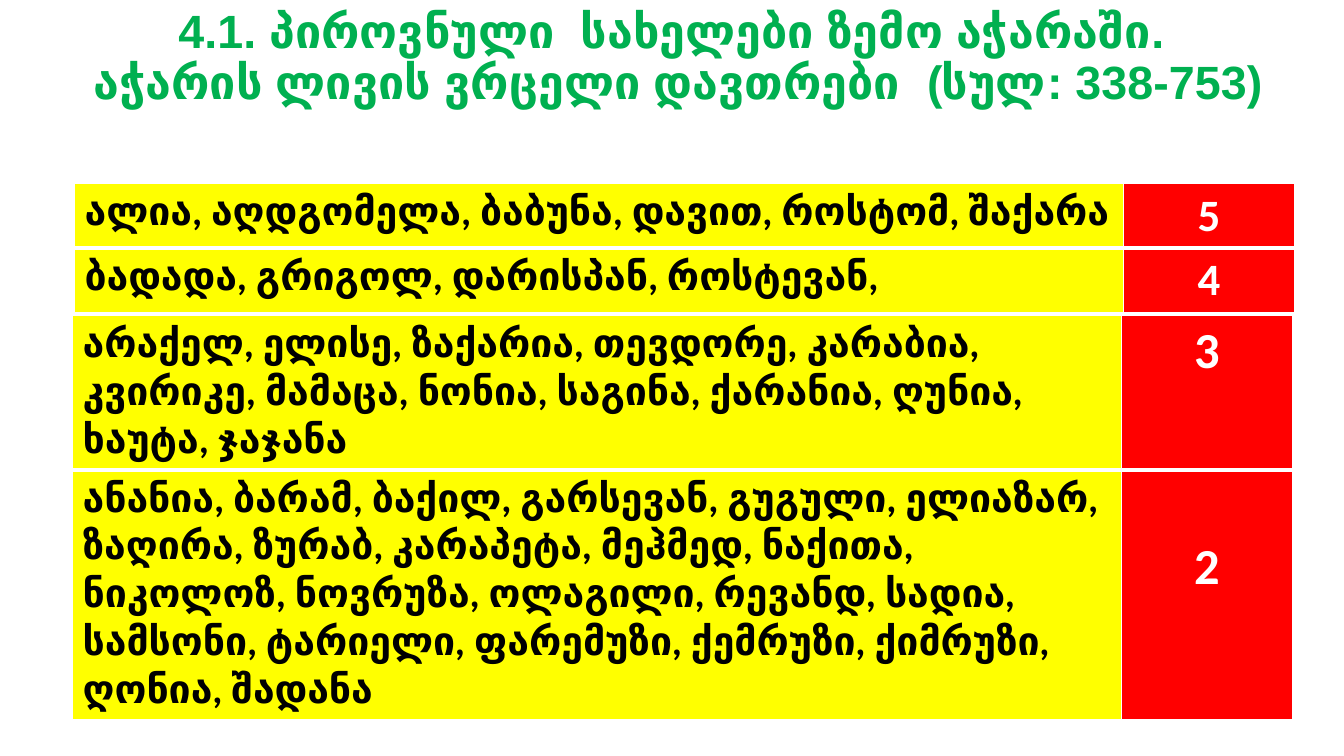
"""Build a slide listing personal names by how often they occur."""
import pptx
import pptx.dml.color
import pptx.enum.text
import pptx.oxml.ns
import pptx.util
from lxml import etree

WIDTH, HEIGHT = 13.33, 7.5
WHITE, BLACK, GREEN, YELLOW, RED = "FFFFFF", "000000", "00B050", "FFFF00", "FF0000"
COLUMNS = (10.4, 1.7)
INSET = 0.05
THIN, THICK = 1, 3
CENTER = pptx.enum.text.PP_ALIGN.CENTER
LEFT = pptx.enum.text.PP_ALIGN.LEFT

TITLE = (
    "4.1. პიროვნული  სახელები ზემო აჭარაში. ",
    "აჭარის ლივის ვრცელი დავთრები  (სულ: 338-753)",
)
TABLES = (
    {
        "position": (0.74, 1.82),
        "heights": (0.64, 0.64),
        "count_size": 32,
        "count_offsets": (0, 0),
        "rows": (
            ("ალია, აღდგომელა, ბაბუნა, დავით, როსტომ, შაქარა", "5"),
            ("ბადადა, გრიგოლ, დარისპან, როსტევან,", "4"),
        ),
    },
    {
        "position": (0.72, 3.13),
        "heights": (1.53, 2.48),
        "count_size": 36,
        "count_offsets": (0, 0.61),
        "rows": (
            ("არაქელ, ელისე, ზაქარია, თევდორე, კარაბია, კვირიკე, მამაცა, "
             "ნონია, საგინა, ქარანია, ღუნია, ხაუტა, ჯაჯანა", "3"),
            ("ანანია, ბარამ, ბაქილ, გარსევან, გუგული, ელიაზარ, ზაღირა, "
             "ზურაბ, კარაპეტა, მეჰმედ, ნაქითა, ნიკოლოზ, ნოვრუზა, ოლაგილი, "
             "რევანდ, სადია, სამსონი, ტარიელი, ფარემუზი, ქემრუზი, ქიმრუზი, "
             "ღონია, შადანა", "2"),
        ),
    },
)


def color(value):
    return pptx.dml.color.RGBColor.from_string(value)


def inches(*values):
    return [pptx.util.Inches(value) for value in values]


def write(paragraph, text, font, size, text_color, alignment):
    paragraph.text = text
    paragraph.alignment = alignment
    paragraph.font.name = font
    paragraph.font.size = pptx.util.Pt(size)
    paragraph.font.bold = True
    paragraph.font.color.rgb = color(text_color)


def add_borders(cell, top, bottom):
    properties = cell._tc.get_or_add_tcPr()
    for side, points in zip("LRTB", (THIN, THIN, top, bottom)):
        line = etree.SubElement(properties, pptx.oxml.ns.qn(f"a:ln{side}"),
                                w=str(pptx.util.Pt(points)))
        fill = etree.SubElement(line, pptx.oxml.ns.qn("a:solidFill"))
        etree.SubElement(fill, pptx.oxml.ns.qn("a:srgbClr"), val=WHITE)


def add_title(slide):
    box = slide.shapes.add_textbox(*inches(0.4, 0, 12.65, 1.17))
    frame = box.text_frame
    frame.word_wrap = True
    frame.vertical_anchor = pptx.enum.text.MSO_ANCHOR.MIDDLE
    for index, text in enumerate(TITLE):
        paragraph = frame.add_paragraph() if index else frame.paragraphs[0]
        write(paragraph, text, "Arial", 33.3, GREEN, CENTER)
        paragraph.line_spacing = 0.9


def add_names_table(slide, content):
    heights = content["heights"]
    table = slide.shapes.add_table(
        len(heights), len(COLUMNS),
        *inches(*content["position"], sum(COLUMNS), sum(heights))).table
    for column, width in zip(table.columns, COLUMNS):
        column.width = pptx.util.Inches(width)
    for index, (names, count) in enumerate(content["rows"]):
        table.rows[index].height = pptx.util.Inches(heights[index])
        styles = (
            (names, 28, BLACK, LEFT, YELLOW, 0),
            (count, content["count_size"], WHITE, CENTER, RED,
             content["count_offsets"][index]),
        )
        for column, (text, size, text_color, alignment, fill, offset) in enumerate(styles):
            cell = table.cell(index, column)
            cell.margin_top = pptx.util.Inches(INSET + offset)
            add_borders(cell, THICK if index else THIN, THIN if index else THICK)
            cell.fill.solid()
            cell.fill.fore_color.rgb = color(fill)
            write(cell.text_frame.paragraphs[0], text, "Calibri", size,
                  text_color, alignment)


def main():
    presentation = pptx.Presentation()
    presentation.slide_width, presentation.slide_height = inches(WIDTH, HEIGHT)
    slide = presentation.slides.add_slide(presentation.slide_layouts[6])
    add_title(slide)
    for content in TABLES:
        add_names_table(slide, content)
    presentation.save("out.pptx")


if __name__ == "__main__":
    main()
